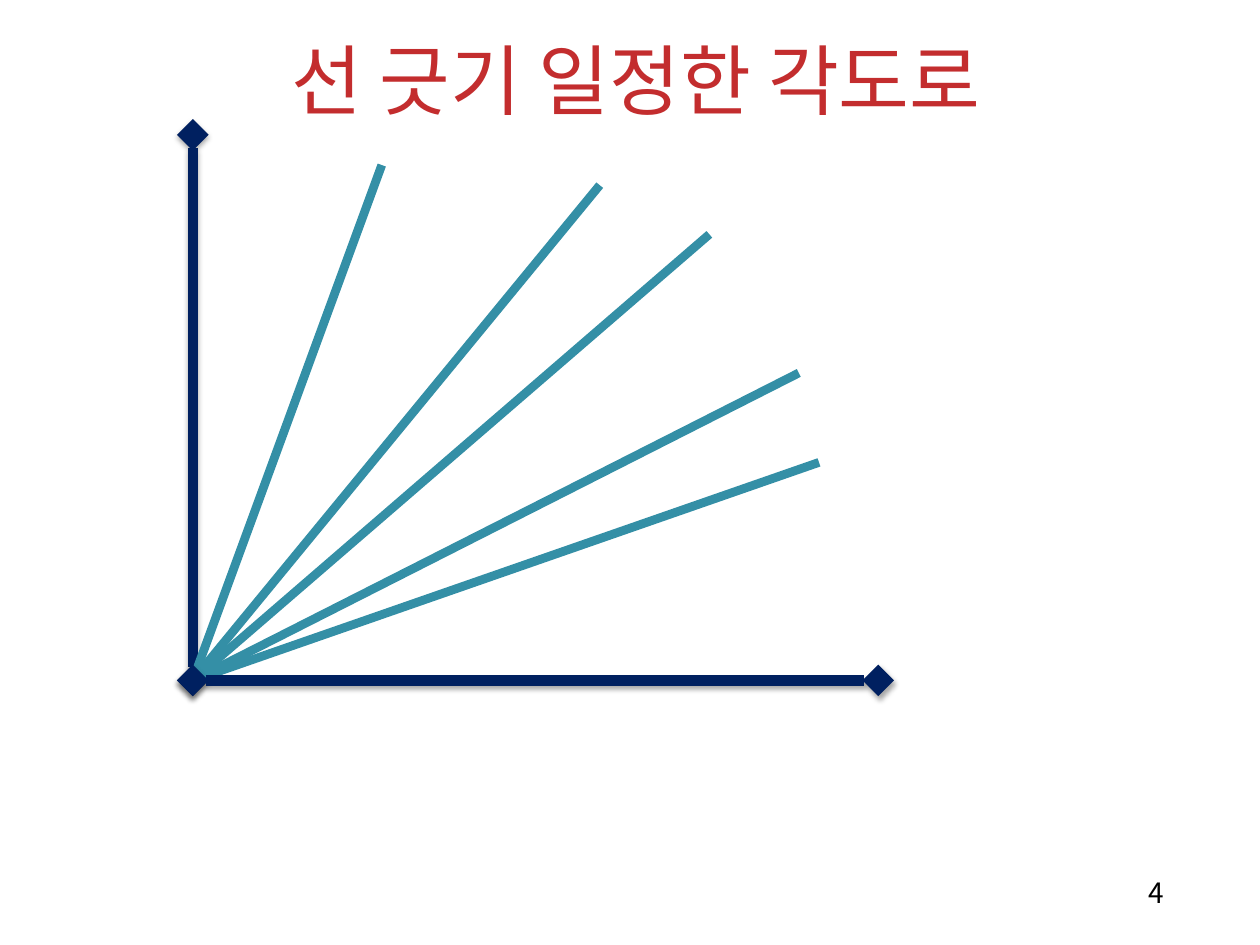
from lxml.etree import SubElement
from pptx import Presentation
from pptx.dml.color import RGBColor
from pptx.enum.shapes import MSO_CONNECTOR
from pptx.enum.text import MSO_ANCHOR, PP_ALIGN
from pptx.oxml.ns import qn
from pptx.util import Inches, Pt

FONT = "Noto Sans CJK KR"
RED, NAVY, TEAL, BLACK = "C32D2E", "002060", "348FA6", "000000"

# Text: wording, box (left, top, width, height), size, colour, anchor
TEXTS = [
    ("4", (8.86, 6.9, 0.63, 0.37), 16, BLACK, MSO_ANCHOR.TOP),
    ("선 긋기 일정한 각도로", (0.59, 0, 8.92, 1.25), 44, RED, MSO_ANCHOR.MIDDLE),
]

# Lines: all meet at the origin
ORIGIN = (1.53, 5.4)
VERTICAL_END = (1.53, 1.07)
HORIZONTAL_END = (6.97, 5.4)
RAY_ENDS = [(5.63, 1.86), (6.34, 2.96), (6.5, 3.67), (4.76, 1.47), (3.03, 1.31)]


def color(value):
    return RGBColor.from_string(value)


def add_text(slide, text, box, size, text_color, anchor):
    frame = slide.shapes.add_textbox(*map(Inches, box)).text_frame
    frame.word_wrap = True
    frame.vertical_anchor = anchor
    paragraph = frame.paragraphs[0]
    paragraph.text = text
    paragraph.alignment = PP_ALIGN.CENTER
    font = paragraph.font
    font.size = Pt(size)
    font.name = FONT
    font.color.rgb = color(text_color)
    # Korean letters take the East Asian font
    SubElement(font._element, qn("a:ea"), typeface=FONT)


def add_line(slide, start, end, line_color, width):
    points = map(Inches, start + end)
    connector = slide.shapes.add_connector(MSO_CONNECTOR.STRAIGHT, *points)
    connector.line.color.rgb = color(line_color)
    connector.line.width = Pt(width)
    effects = SubElement(connector._element.spPr, qn("a:effectLst"))
    return connector, effects


def add_axis(slide, start, end):
    connector, effects = add_line(slide, start, end, NAVY, 6)
    line = connector.line._get_or_add_ln()
    for tag in ("a:headEnd", "a:tailEnd"):
        SubElement(line, qn(tag), type="diamond")
    shadow = SubElement(effects, qn("a:outerShdw"), blurRad=str(Pt(3.1)),
                        dist=str(Pt(1.8)), dir="5400000", rotWithShape="0")
    shadow_color = SubElement(shadow, qn("a:srgbClr"), val=BLACK)
    SubElement(shadow_color, qn("a:alpha"), val="35000")


def main():
    presentation = Presentation()
    presentation.slide_width, presentation.slide_height = Inches(10), Inches(7.5)
    slide = presentation.slides.add_slide(presentation.slide_layouts[6])

    for text in TEXTS:
        add_text(slide, *text)

    # Rays lie between the two axes in the stacking order
    add_axis(slide, VERTICAL_END, ORIGIN)
    for ray_end in RAY_ENDS:
        add_line(slide, ORIGIN, ray_end, TEAL, 5)
    add_axis(slide, ORIGIN, HORIZONTAL_END)

    presentation.save("out.pptx")


if __name__ == "__main__":
    main()
